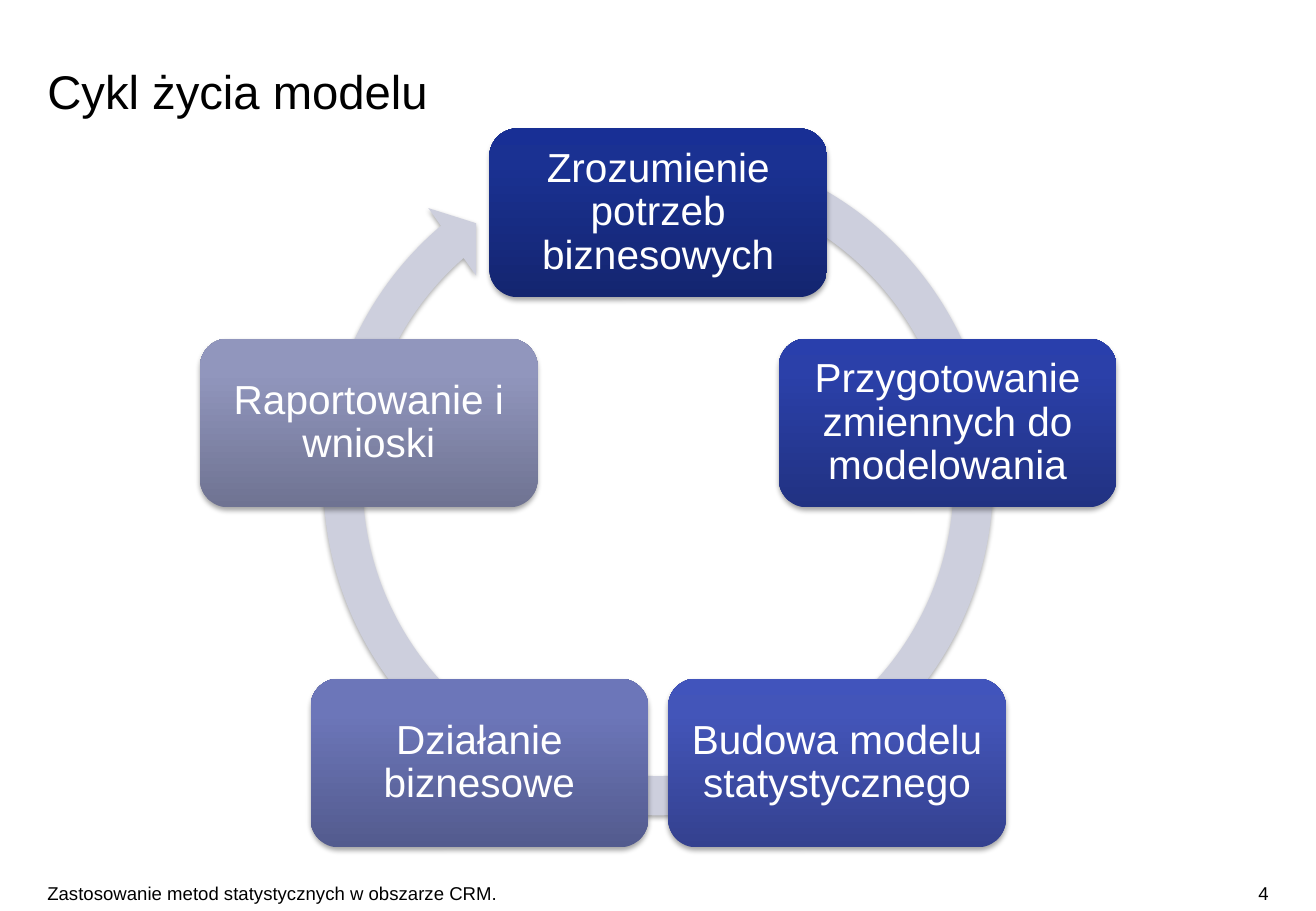
from copy import deepcopy
from math import cos, radians, sin

from lxml import etree
from pptx import Presentation
from pptx.dml.color import RGBColor
from pptx.enum.shapes import MSO_SHAPE
from pptx.enum.text import MSO_ANCHOR, PP_ALIGN
from pptx.oxml.ns import qn
from pptx.util import Cm, Pt

ROUNDED, CIRCULAR_ARROW = MSO_SHAPE.ROUNDED_RECTANGLE, MSO_SHAPE.CIRCULAR_ARROW
LEFT, CENTER, RIGHT = PP_ALIGN.LEFT, PP_ALIGN.CENTER, PP_ALIGN.RIGHT
TOP, MIDDLE, BOTTOM = MSO_ANCHOR.TOP, MSO_ANCHOR.MIDDLE, MSO_ANCHOR.BOTTOM

COLORS = {"text": "000000", "stage_text": "FFFFFF", "ring": "CDCFDD", "shadow": "000000"}

# Stage label and its gradient from bottom to top, clockwise from the top
STAGES = [
    ("Zrozumienie potrzeb biznesowych", ("142570", "1A3192", "182F95")),
    ("Przygotowanie zmiennych do modelowania", ("213282", "2B40A9", "293FAC")),
    ("Budowa modelu statystycznego", ("34418F", "4355B9", "4154BC")),
    ("Działanie biznesowe", ("535B8E", "6C76B9", "6B76BB")),
    ("Raportowanie i wnioski", ("6F7392", "9196BD", "9196BF")),
]
GRADIENT_POSITIONS = (0, 0.8, 1)

CENTER_X, CENTER_Y, RADIUS = 13.76, 10.81, 6.36
STAGE_W, STAGE_H = 7.06, 3.53
RING_SIZE, RING_CENTER_Y = 14.91, 10.05


def write(shape, text, size, color, align, anchor, insets):
    frame = shape.text_frame
    frame.word_wrap = True
    frame.vertical_anchor = anchor
    (frame.margin_left, frame.margin_top,
     frame.margin_right, frame.margin_bottom) = [Cm(inset) for inset in insets]
    paragraph = frame.paragraphs[0]
    paragraph.alignment = align
    run = paragraph.add_run()
    run.text = text
    run.font.name = "Arial"
    run.font.size = Pt(size)
    run.font.color.rgb = RGBColor.from_string(COLORS[color])
    return paragraph


def add_soft_shadow(shape):
    shape.shadow.inherit = False
    effects = shape._element.spPr.find(qn("a:effectLst"))
    shadow = etree.SubElement(effects, qn("a:outerShdw"), blurRad=str(Pt(3.1)),
                              dist=str(Pt(1.8)), dir="5400000", rotWithShape="0")
    color = etree.SubElement(shadow, qn("a:srgbClr"), val=COLORS["shadow"])
    etree.SubElement(color, qn("a:alpha"), val="35000")


prs = Presentation()
prs.slide_width, prs.slide_height = Cm(27.51), Cm(19.05)
slide = prs.slides.add_slide(prs.slide_layouts[5])

# Title
title = slide.shapes.title
title.left, title.top, title.width, title.height = Cm(0.99), Cm(1.27), Cm(21.67), Cm(1.22)
write(title, "Cykl życia modelu", 28, "text", LEFT, BOTTOM, (0, 0, 0, 0))

# Footer and page number
page_number = slide.shapes.add_textbox(Cm(24.26), Cm(18.31), Cm(2.26), Cm(0.74))
write(page_number, "4", 11, "text", RIGHT, MIDDLE, (0.25, 0.13, 0, 0.13))
footer = slide.shapes.add_textbox(Cm(0.99), Cm(18.31), Cm(20.29), Cm(0.74))
write(footer, "Zastosowanie metod statystycznych w obszarze CRM.", 11, "text",
      LEFT, TOP, (0, 0.13, 0.25, 0.13))

# Ring arrow behind the stages
ring = slide.shapes.add_shape(
    CIRCULAR_ARROW, Cm(CENTER_X - RING_SIZE / 2), Cm(RING_CENTER_Y - RING_SIZE / 2),
    Cm(RING_SIZE), Cm(RING_SIZE))
for index, value in enumerate((0.055, 3.307, 137.535, 173.997, 0.058)):
    ring.adjustments[index] = value
ring.fill.solid()
ring.fill.fore_color.rgb = RGBColor.from_string(COLORS["ring"])
ring.line.fill.background()
add_soft_shadow(ring)

# Stages at equal angles around the circle
for index, (label, gradient) in enumerate(STAGES):
    angle = radians(index * 360 / len(STAGES))
    stage = slide.shapes.add_shape(
        ROUNDED,
        Cm(CENTER_X + RADIUS * sin(angle) - STAGE_W / 2),
        Cm(CENTER_Y - RADIUS * cos(angle) - STAGE_H / 2),
        Cm(STAGE_W), Cm(STAGE_H))
    stage.fill.gradient()
    stage.fill.gradient_angle = 90
    stop_list = stage._element.spPr.find(".//" + qn("a:gsLst"))
    stop_list.append(deepcopy(stop_list[0]))
    for stop, position, color in zip(stage.fill.gradient_stops, GRADIENT_POSITIONS, gradient):
        stop.position = position
        stop.color.rgb = RGBColor.from_string(color)
    stage.line.fill.background()
    add_soft_shadow(stage)
    paragraph = write(stage, label, 24, "stage_text", CENTER, MIDDLE, (0.25,) * 4)
    paragraph.line_spacing = 0.9

prs.save("out.pptx")
